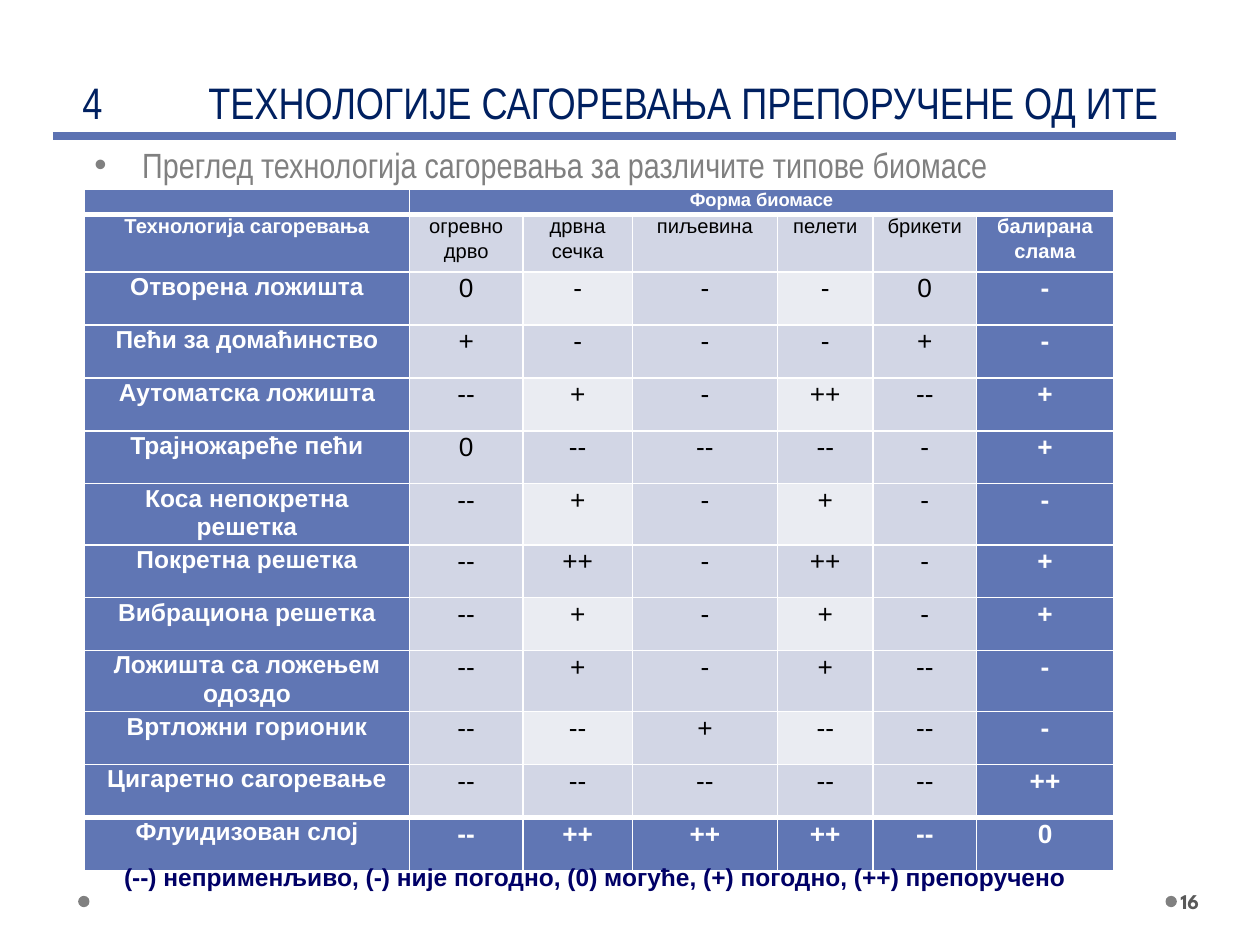
from lxml.etree import SubElement
from pptx import Presentation
from pptx.dml.color import RGBColor
from pptx.enum.shapes import MSO_CONNECTOR, MSO_SHAPE
from pptx.enum.text import MSO_ANCHOR, PP_ALIGN
from pptx.oxml.ns import qn
from pptx.util import Inches, Pt

WHITE = RGBColor(0xFF, 0xFF, 0xFF)
BLACK = RGBColor(0x00, 0x00, 0x00)
GRAY = RGBColor(0x80, 0x80, 0x80)
DARK_GRAY = RGBColor(0x59, 0x59, 0x59)
NAVY = RGBColor(0x00, 0x20, 0x60)
LEGEND_BLUE = RGBColor(0x00, 0x00, 0x66)
RULE_BLUE = RGBColor(0x5C, 0x72, 0xB2)
HEADER_BLUE = RGBColor(0x60, 0x76, 0xB4)
BAND = RGBColor(0xD2, 0xD6, 0xE5)
LIGHT_BAND = RGBColor(0xEA, 0xEC, 0xF2)


def write(paragraph, text, font_format):
    """Add a run whose font takes name, size and bold from font_format, and its colour."""
    run = paragraph.add_run()
    run.text = text
    for name, value in font_format.items():
        if name == "color":
            run.font.color.rgb = value
        else:
            setattr(run.font, name, value)


def add_text(slide, box, text, font_format, frame_format, paragraph_format):
    frame = slide.shapes.add_textbox(*[Inches(length) for length in box]).text_frame
    frame.word_wrap = True
    for name, value in frame_format.items():
        setattr(frame, name, value)
    paragraph = frame.paragraphs[0]
    for name, value in paragraph_format.items():
        setattr(paragraph, name, value)
    write(paragraph, text, font_format)
    return paragraph


presentation = Presentation()
presentation.slide_width = Inches(10)
presentation.slide_height = Inches(7.5)
slide = presentation.slides.add_slide(presentation.slide_layouts[6])

# Footer dots
for left in (9.25, 0.62):
    dot = slide.shapes.add_shape(
        MSO_SHAPE.OVAL, Inches(left), Inches(7.11), Inches(0.09), Inches(0.09))
    dot.shadow.inherit = False
    dot.fill.solid()
    dot.fill.fore_color.rgb = GRAY
    dot.line.fill.background()

# Title, subtitle and rule
title = add_text(
    slide, (0.35, 0, 9.15, 1.07), "4\tТЕХНОЛОГИЈЕ САГОРЕВАЊА ПРЕПОРУЧЕНЕ ОД ИТЕ",
    {"name": "Arial Narrow", "size": Pt(25.2), "color": NAVY},
    {"vertical_anchor": MSO_ANCHOR.BOTTOM},
    {"alignment": PP_ALIGN.CENTER, "line_spacing": Pt(36)})
tabs = SubElement(title._p.get_or_add_pPr(), qn("a:tabLst"))
SubElement(tabs, qn("a:tab"), pos=str(Inches(1)), algn="l")

subtitle = add_text(
    slide, (0.65, 1.09, 9, 4.95),
    "Преглед технологија сагоревања за различите типове биомасе",
    {"name": "Arial Narrow", "size": Pt(20), "color": GRAY},
    {}, {"space_before": Pt(4)})
properties = subtitle._p.get_or_add_pPr()
properties.set("marL", str(Inches(0.38)))
properties.set("indent", str(Inches(-0.38)))
SubElement(properties, qn("a:buFont"), typeface="Arial")
SubElement(properties, qn("a:buChar"), char="•")

rule = slide.shapes.add_connector(
    MSO_CONNECTOR.STRAIGHT, Inches(0.42), Inches(1.08), Inches(9.33), Inches(1.08))
rule.line.color.rgb = RULE_BLUE
rule.line.width = Pt(4.5)
SubElement(rule._element.spPr, qn("a:effectLst"))

add_text(
    slide, (9.34, 6.95, 0.61, 0.4), "16",
    {"name": "League Spartan", "size": Pt(12), "bold": True, "color": DARK_GRAY},
    {"vertical_anchor": MSO_ANCHOR.MIDDLE, "margin_left": Inches(0.03),
     "margin_right": Inches(0.05)}, {})

# Suitability table
rows = [
    ["", "Форма биомасе", "", "", "", "", ""],
    ["Технологија сагоревања", "огревно дрво", "дрвна сечка", "пиљевина",
     "пелети", "брикети", "балирана слама"],
    ["Отворена ложишта", "0", "-", "-", "-", "0", "-"],
    ["Пећи за домаћинство", "+", "-", "-", "-", "+", "-"],
    ["Аутоматска ложишта", "--", "+", "-", "++", "--", "+"],
    ["Трајножареће пећи", "0", "--", "--", "--", "-", "+"],
    ["Коса непокретна решетка", "--", "+", "-", "+", "-", "-"],
    ["Покретна решетка", "--", "++", "-", "++", "-", "+"],
    ["Вибрациона решетка", "--", "+", "-", "+", "-", "+"],
    ["Ложишта са ложењем одоздо", "--", "+", "-", "+", "--", "-"],
    ["Вртложни горионик", "--", "--", "+", "--", "--", "-"],
    ["Цигаретно сагоревање", "--", "--", "--", "--", "--", "++"],
    ["Флуидизован слој", "--", "++", "++", "++", "--", "0"],
]
column_widths = [2.58, 0.9, 0.87, 1.15, 0.76, 0.82, 1.09]
row_heights = [0.2, 0.46] + [0.42] * 11
last_row, last_column = len(rows) - 1, len(column_widths) - 1

table = slide.shapes.add_table(
    len(rows), len(column_widths), Inches(0.67), Inches(1.5),
    Inches(sum(column_widths)), Inches(sum(row_heights))).table
for column, width in zip(table.columns, column_widths):
    column.width = Inches(width)
for row, height in zip(table.rows, row_heights):
    row.height = Inches(height)
table.cell(0, 1).merge(table.cell(0, last_column))

for row_index, row in enumerate(rows):
    for column_index, text in enumerate(row):
        cell = table.cell(row_index, column_index)
        cell.margin_left = cell.margin_right = Inches(0.07)
        cell.margin_top = cell.margin_bottom = 0

        thick_top = row_index in (1, last_row)
        thick_bottom = row_index in (0, last_row - 1)
        borders = {"L": 1, "R": 1, "T": 3 if thick_top else 1, "B": 3 if thick_bottom else 1}
        for side, width in borders.items():
            border = SubElement(cell._tc.get_or_add_tcPr(), qn(f"a:ln{side}"), w=str(Pt(width)))
            SubElement(SubElement(border, qn("a:solidFill")), qn("a:srgbClr"), val=str(WHITE))

        emphasized = row_index in (0, last_row) or column_index in (0, last_column)
        light = row_index % 2 == 0 and column_index in (2, 4)
        cell.fill.solid()
        cell.fill.fore_color.rgb = HEADER_BLUE if emphasized else LIGHT_BAND if light else BAND

        if row_index == 0:
            size = 10.5
        elif row_index == 1:
            size = 11.5
        else:
            size = 14 if column_index == 0 else 15
        paragraph = cell.text_frame.paragraphs[0]
        paragraph.alignment = PP_ALIGN.CENTER
        # Tighter row names keep the two-line rows low enough for the legend below
        paragraph.line_spacing = 1.04 if column_index == 0 else 1.07
        paragraph.space_before = Pt(0 if column_index == 0 else round(size * 0.2, 1))
        if text:
            write(paragraph, text, {"name": "Arial", "size": Pt(size), "bold": emphasized,
                                    "color": WHITE if emphasized else BLACK})
        else:
            SubElement(paragraph._p, qn("a:endParaRPr"), sz=str(int(size * 100)))

# Legend
add_text(
    slide, (0.39, 6.79, 8.67, 0.34),
    "(--) неприменљиво, (-) није погодно, (0) могуће, (+) погодно, (++) препоручено",
    {"name": "Arial", "size": Pt(14), "bold": True, "color": LEGEND_BLUE},
    {}, {"alignment": PP_ALIGN.CENTER, "space_before": Pt(2.8)})

presentation.save("out.pptx")
